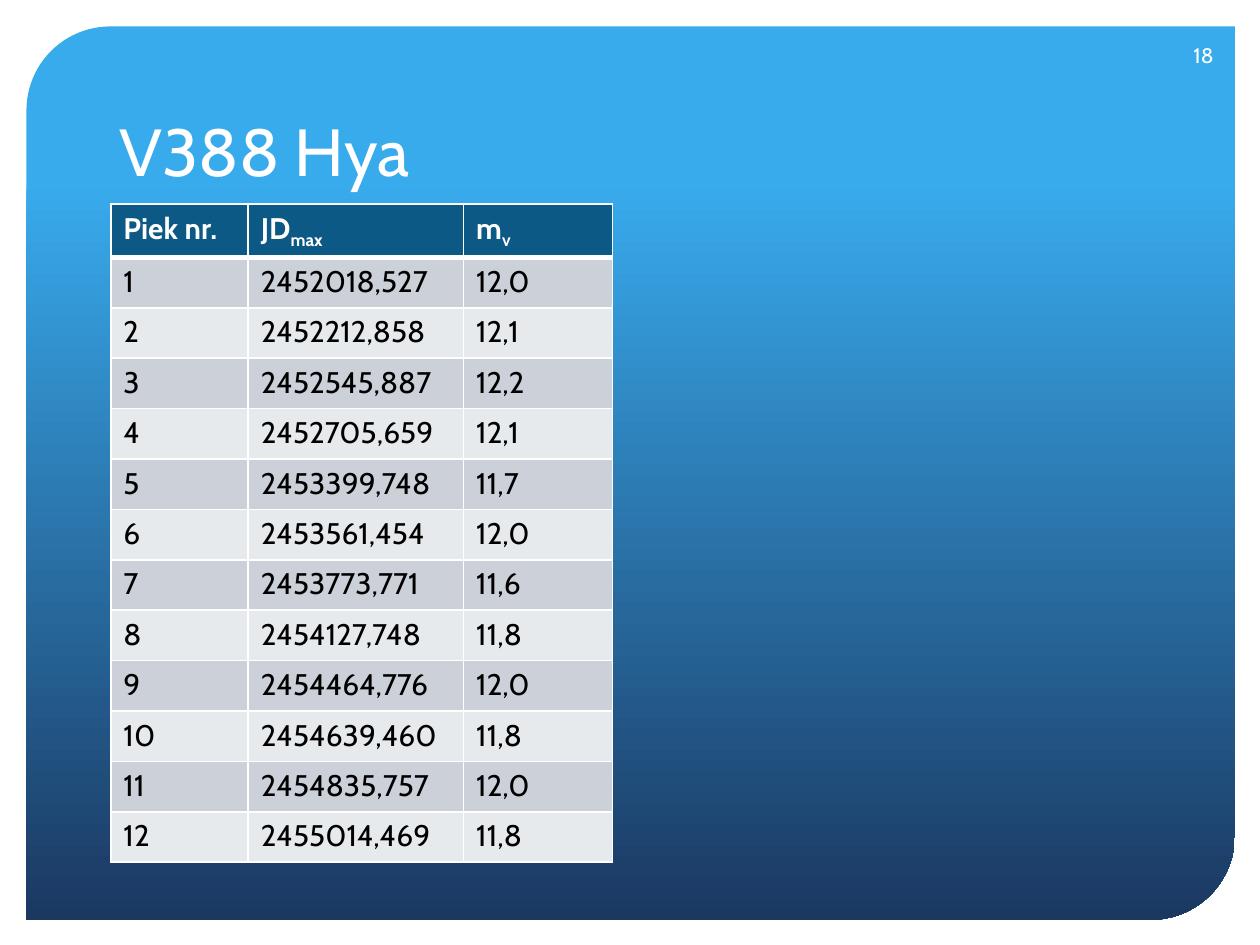
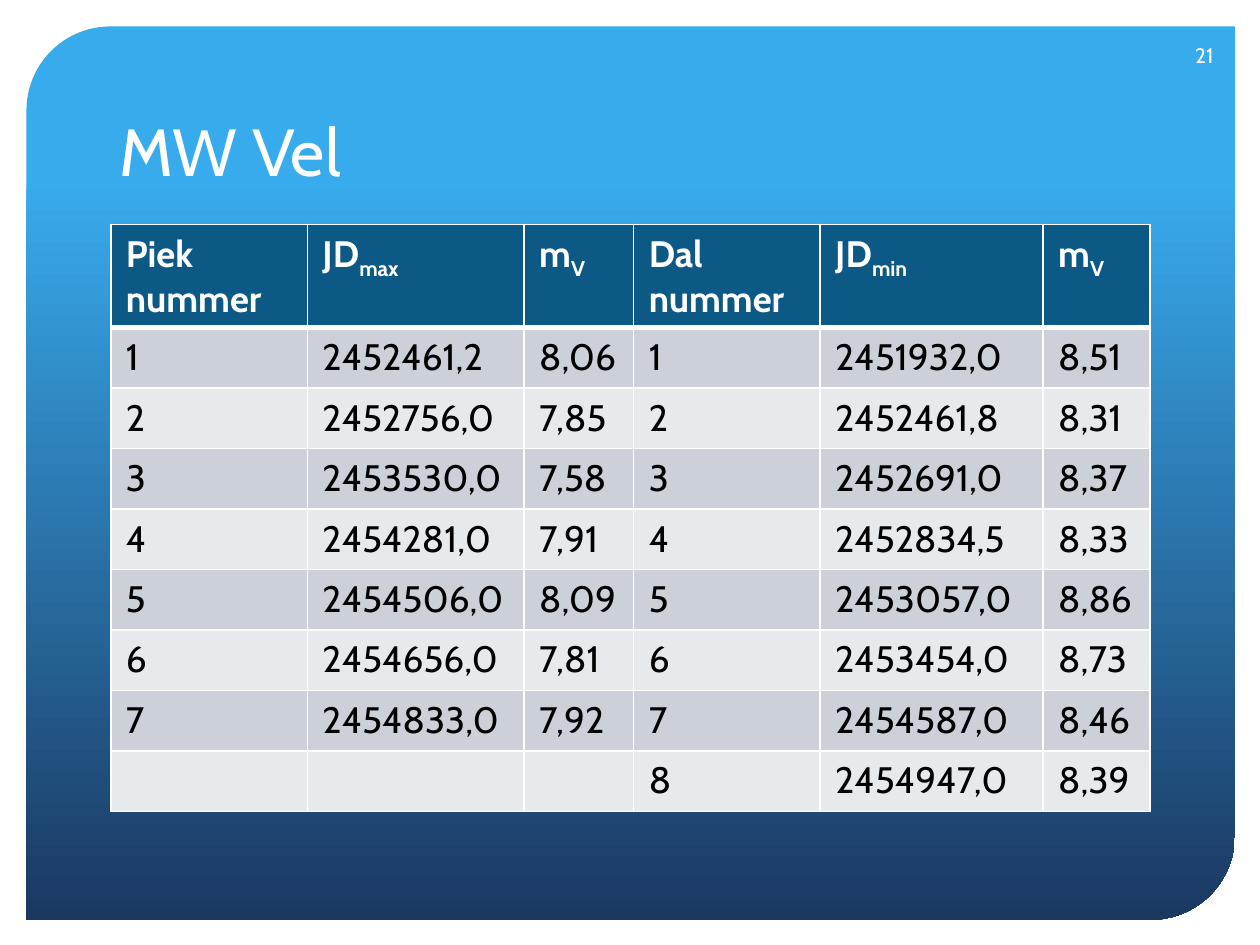
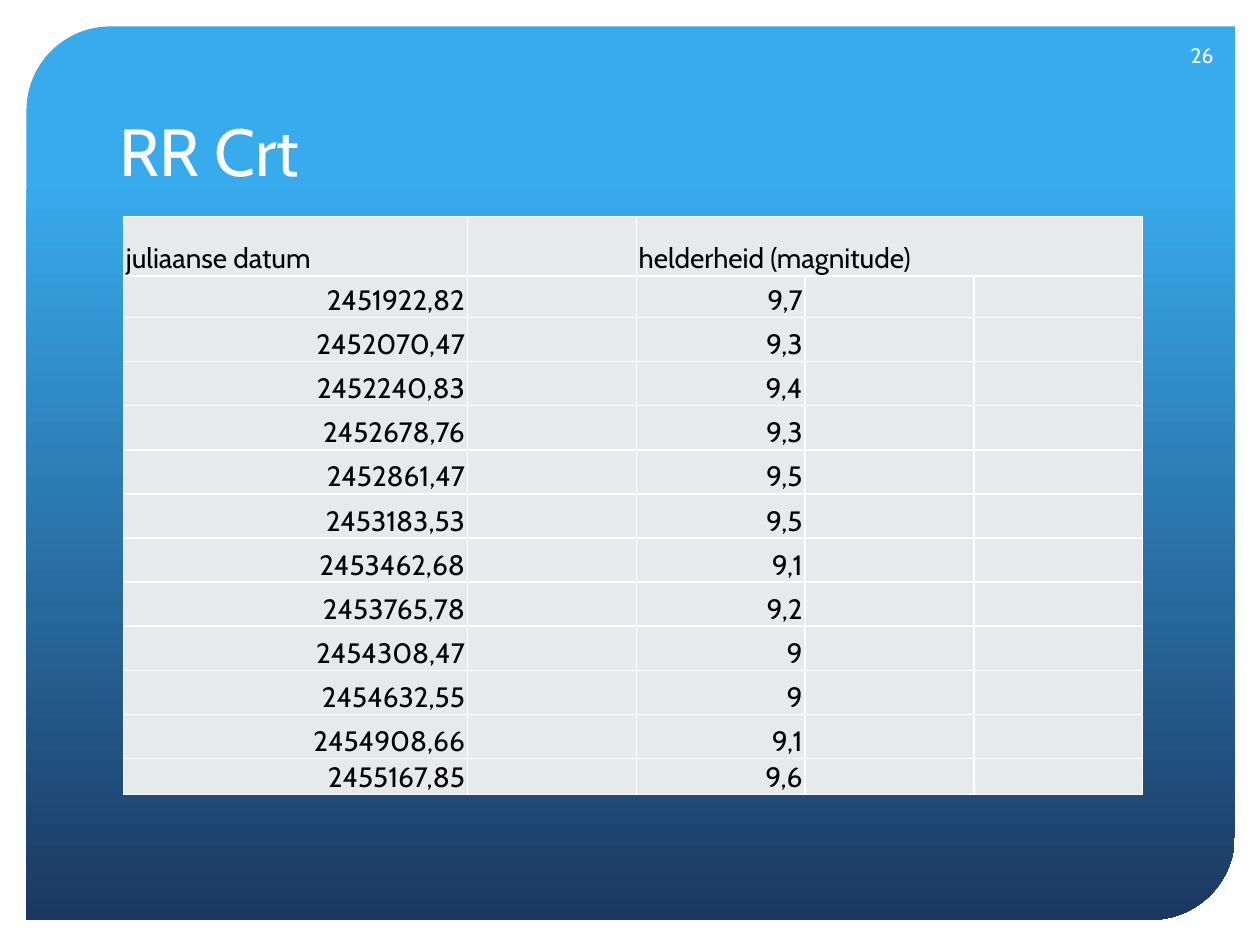
"""Build three slides with tables of variable star maxima and minima."""
from lxml import etree
from pptx import Presentation
from pptx import util as u
from pptx.dml.color import RGBColor
from pptx.enum import shapes, text
from pptx.oxml.ns import qn

FONT = "Cabin"
WHITE = RGBColor(0xFF, 0xFF, 0xFF)
BLACK = RGBColor(0x00, 0x00, 0x00)
SKY = RGBColor(0x38, 0xAB, 0xED)
NAVY = RGBColor(0x1B, 0x38, 0x61)
HEADER = RGBColor(0x0C, 0x59, 0x86)
BAND_DARK = RGBColor(0xCC, 0xD1, 0xD9)
BAND_LIGHT = RGBColor(0xE7, 0xEA, 0xED)
LEFT, RIGHT = text.PP_ALIGN.LEFT, text.PP_ALIGN.RIGHT
TOP, MIDDLE, BOTTOM = text.MSO_ANCHOR.TOP, text.MSO_ANCHOR.MIDDLE, text.MSO_ANCHOR.BOTTOM

HYA_ROWS = [
    ["Piek nr.", "JD_max", "m_v"],
    ["1", "2452018,527", "12,0"],
    ["2", "2452212,858", "12,1"],
    ["3", "2452545,887", "12,2"],
    ["4", "2452705,659", "12,1"],
    ["5", "2453399,748", "11,7"],
    ["6", "2453561,454", "12,0"],
    ["7", "2453773,771", "11,6"],
    ["8", "2454127,748", "11,8"],
    ["9", "2454464,776", "12,0"],
    ["10", "2454639,460", "11,8"],
    ["11", "2454835,757", "12,0"],
    ["12", "2455014,469", "11,8"],
]
VEL_ROWS = [
    ["Piek nummer", "JD_max", "m_V", "Dal nummer", "JD_min", "m_V"],
    ["1", "2452461,2", "8,06", "1", "2451932,0", "8,51"],
    ["2", "2452756,0", "7,85", "2", "2452461,8", "8,31"],
    ["3", "2453530,0", "7,58", "3", "2452691,0", "8,37"],
    ["4", "2454281,0", "7,91", "4", "2452834,5", "8,33"],
    ["5", "2454506,0", "8,09", "5", "2453057,0", "8,86"],
    ["6", "2454656,0", "7,81", "6", "2453454,0", "8,73"],
    ["7", "2454833,0", "7,92", "7", "2454587,0", "8,46"],
    ["", "", "", "8", "2454947,0", "8,39"],
]
CRT_VALUES = [
    ("2451922,82", "9,7"), ("2452070,47", "9,3"), ("2452240,83", "9,4"),
    ("2452678,76", "9,3"), ("2452861,47", "9,5"), ("2453183,53", "9,5"),
    ("2453462,68", "9,1"), ("2453765,78", "9,2"), ("2454308,47", "9"),
    ("2454632,55", "9"), ("2454908,66", "9,1"), ("2455167,85", "9,6"),
]
CRT_ROWS = [["juliaanse datum", "", "helderheid (magnitude)", "", ""]]
CRT_ROWS += [[date, "", magnitude, "", ""] for date, magnitude in CRT_VALUES]

STARS = [
    dict(title="V388 Hya", number="18", rows=HYA_ROWS, place=(0.88, 1.62), size=17,
         widths=[1.09, 1.71, 1.18], heights=[0.4] * 13,
         insets=(0.1, 0.05, 0.1, 0.05), banded=True),
    dict(title="MW Vel", number="21", rows=VEL_ROWS, place=(0.88, 1.78), size=21,
         widths=[1.56, 1.72, 0.87, 1.48, 1.77, 0.85], heights=[0.82] + [0.48] * 8,
         insets=(0.12, 0.06, 0.12, 0.06), banded=True),
    dict(title="RR Crt", number="26", rows=CRT_ROWS, place=(0.98, 1.72), size=16,
         widths=[2.73] + [1.34] * 4, heights=[0.47, 0.33] + [0.35] * 10 + [0.28],
         insets=(0.02, 0.02, 0.02, 0), banded=False),
]


def write(frame, content, size, color=WHITE, bold=False, align=LEFT):
    """Write one paragraph; the part after an underscore becomes a subscript."""
    paragraph = frame.paragraphs[0]
    paragraph.alignment = align
    if not content:
        etree.SubElement(paragraph._p, qn("a:endParaRPr"), sz=str(size * 100))
    for index, part in enumerate(content.split("_") if content else []):
        run = paragraph.add_run()
        run.text = part
        run.font.name = FONT
        run.font.size = u.Pt(size)
        run.font.bold = bold
        run.font.color.rgb = color
        if index:
            run.font._element.set("baseline", "-25000")


def add_borders(cell, bottom, top):
    """Draw white lines on all four sides of a cell, with widths in points."""
    properties = cell._tc.get_or_add_tcPr()
    for side, width in (("L", 1), ("R", 1), ("T", top), ("B", bottom)):
        line = etree.SubElement(properties, qn(f"a:ln{side}"), w=str(u.Pt(width)))
        fill = etree.SubElement(line, qn("a:solidFill"))
        etree.SubElement(fill, qn("a:srgbClr"), val=str(WHITE))


presentation = Presentation()
presentation.slide_width = u.Inches(10)
presentation.slide_height = u.Inches(7.5)

for star in STARS:
    slide = presentation.slides.add_slide(presentation.slide_layouts[5])

    panel = slide.shapes.add_shape(
        shapes.MSO_SHAPE.ROUND_2_DIAG_RECTANGLE,
        u.Inches(0.21), u.Inches(0.21), u.Inches(9.59), u.Inches(7.09))
    panel.adjustments[0] = 0.094
    panel.adjustments[1] = 0
    panel.shadow.inherit = False
    panel.line.fill.background()
    panel.fill.gradient()
    panel.fill.gradient_angle = 270
    for stop, position, color in zip(panel.fill.gradient_stops, (0.17, 1), (SKY, NAVY)):
        stop.position = position
        stop.color.rgb = color
    slide.shapes._spTree.insert(2, panel._element)

    title = slide.shapes.title
    title.left, title.top = u.Inches(0.85), u.Inches(0.42)
    title.width, title.height = u.Inches(8.29), u.Inches(1.14)
    title.text_frame.vertical_anchor = BOTTOM
    write(title.text_frame, star["title"], size=38)

    number = slide.shapes.add_textbox(
        u.Inches(9.19), u.Inches(0.24), u.Inches(0.54), u.Inches(0.4))
    number.text_frame.word_wrap = True
    number.text_frame.vertical_anchor = MIDDLE
    write(number.text_frame, star["number"], size=12, align=RIGHT)

    rows, banded = star["rows"], star["banded"]
    left, top = star["place"]
    table = slide.shapes.add_table(
        len(rows), len(rows[0]), u.Inches(left), u.Inches(top),
        u.Inches(sum(star["widths"])), u.Inches(sum(star["heights"]))).table
    table.first_row = banded
    table.horz_banding = False
    for column, width in zip(table.columns, star["widths"]):
        column.width = u.Inches(width)
    for row, height in zip(table.rows, star["heights"]):
        row.height = u.Inches(height)

    for row_index, values in enumerate(rows):
        heading = banded and row_index == 0
        for column_index, value in enumerate(values):
            cell = table.cell(row_index, column_index)
            (cell.margin_left, cell.margin_top,
             cell.margin_right, cell.margin_bottom) = map(u.Inches, star["insets"])
            cell.vertical_anchor = TOP if banded else BOTTOM
            add_borders(cell, bottom=3 if heading else 1,
                        top=3 if banded and row_index == 1 else 1)
            cell.fill.solid()
            if heading:
                cell.fill.fore_color.rgb = HEADER
            else:
                cell.fill.fore_color.rgb = BAND_DARK if banded and row_index % 2 else BAND_LIGHT
            write(cell.text_frame, value, size=star["size"],
                  color=WHITE if heading else BLACK, bold=heading,
                  align=LEFT if banded or row_index == 0 else RIGHT)
    if not banded:
        table.cell(0, 2).merge(table.cell(0, 4))

presentation.save("out.pptx")
